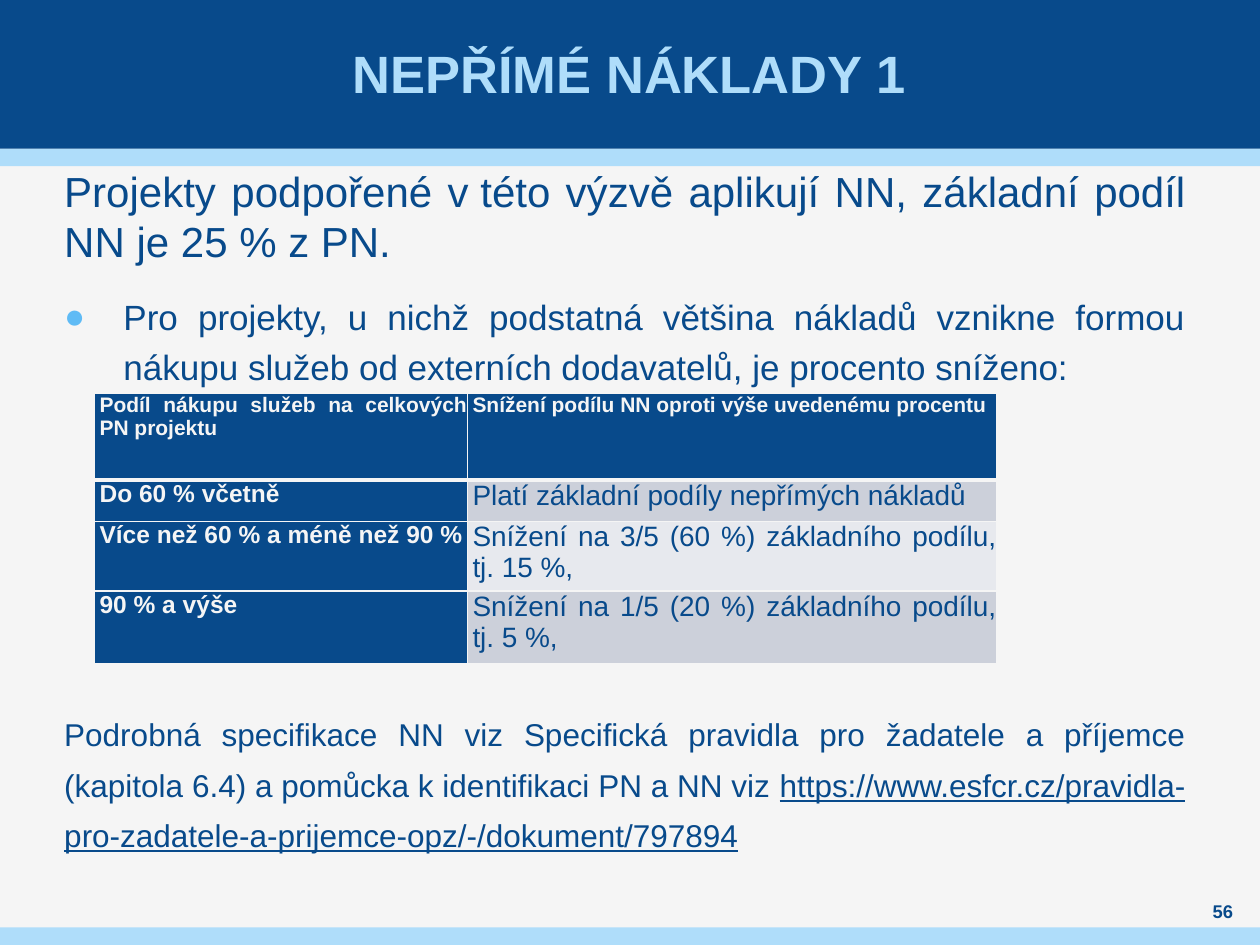
from dataclasses import dataclass

from lxml.etree import SubElement
from pptx import Presentation
from pptx.dml.color import RGBColor
from pptx.enum.shapes import MSO_SHAPE as Shape
from pptx.enum.text import MSO_ANCHOR as Anchor, MSO_AUTO_SIZE as Fit, PP_ALIGN as Align
from pptx.oxml import parse_xml
from pptx.oxml.ns import nsdecls, qn
from pptx.util import Inches, Pt

WIDTH, HEIGHT = Inches(10), Inches(7.5)


@dataclass(frozen=True)
class Theme:
    font: str = "Arial"
    navy: str = "084A8B"
    sky: str = "AFDDFA"
    dot: str = "5FBBF5"
    pale: str = "F5F5F5"
    odd: str = "CCD0DA"
    even: str = "E7E9EE"
    title: float = 30
    lead: float = 24
    item: float = 20
    note: float = 18
    head: float = 12
    label: float = 14
    cell: float = 16
    page: float = 10.5
    line: float = 28.8
    gap: float = 6


THEME = Theme()
HEADS = ("Podíl nákupu služeb na celkových PN projektu",
         "Snížení podílu NN oproti výše uvedenému procentu")
ROWS = (("Do 60 % včetně", "Platí základní podíly nepřímých nákladů "),
        ("Více než 60 % a méně než 90 %",
         "Snížení na 3/5 (60 %) základního podílu, tj. 15 %, "),
        ("90 % a výše", "Snížení na 1/5 (20 %) základního podílu, tj. 5 %, "))
LEAD = ("Projekty podpořené v\u00a0této výzvě aplikují NN, "
        "základní podíl NN je 25 % z PN. ")
ITEM = ("Pro projekty, u nichž podstatná většina nákladů vznikne formou "
        "nákupu služeb od externích dodavatelů, je procento sníženo:")
NOTE = ("Podrobná specifikace NN viz Specifická pravidla pro žadatele a příjemce "
        "(kapitola 6.4) a pomůcka k identifikaci PN a NN viz ")
LINK = "https://www.esfcr.cz/pravidla-pro-zadatele-a-prijemce-opz/-/dokument/797894"


def across(share):
    return int(WIDTH * share / 100)


def down(share):
    return int(HEIGHT * share / 100)


def area(x, y, w, h):
    """Turn percentages of the slide into left, top, width, height."""
    return across(x), down(y), across(w), down(h)


def paint(fill, color):
    fill.solid()
    fill.fore_color.rgb = RGBColor.from_string(color)


def style(para, size, color, bold=False):
    for run in para.runs:
        font = run.font
        font.name, font.size, font.bold = THEME.font, Pt(size), bold
        font.color.rgb = RGBColor.from_string(color)


def place(shape, box, side=0.0, anchor=Anchor.TOP):
    shape.left, shape.top, shape.width, shape.height = box
    frame = shape.text_frame
    frame.word_wrap, frame.auto_size = True, Fit.NONE
    frame.margin_left = frame.margin_right = Inches(side)
    frame.margin_top = frame.margin_bottom = 0
    frame.vertical_anchor = anchor
    return frame


def add_bar(slide, y, h, color):
    """Add a full-width band behind everything else."""
    bar = slide.shapes.add_shape(Shape.RECTANGLE, *area(0, y, 100, h))
    bar.shadow.inherit = False
    bar.line.fill.background()
    paint(bar.fill, color)
    tree = bar._element.getparent()
    tree.insert(2, bar._element)


def set_line(frame, text, size, color, bold=True):
    frame.text = text
    para = frame.paragraphs[0]
    para.alignment = Align.CENTER
    style(para, size, color, bold)


def set_para(para, text, size, before, dot=False):
    para.text = text
    para.alignment = Align.JUSTIFY
    para.line_spacing = Pt(THEME.line)
    para.space_before, para.space_after = Pt(before), Pt(0)
    style(para, size, THEME.navy)
    props = para._p.get_or_add_pPr()
    indent = Inches(0.47) if dot else 0
    props.set("marL", str(indent))
    props.set("indent", str(-indent))
    if dot:
        tint = SubElement(props, qn("a:buClr"))
        SubElement(tint, qn("a:srgbClr"), val=THEME.dot)
        SubElement(props, qn("a:buFont"), typeface=THEME.font)
        SubElement(props, qn("a:buChar"), char="●")
    else:
        SubElement(props, qn("a:buNone"))


def fill_body(frame):
    frame.text = ""
    lead = frame.paragraphs[0]
    set_para(lead, LEAD, THEME.lead, THEME.gap)
    lead.space_after = Pt(THEME.gap)
    set_para(frame.add_paragraph(), ITEM, THEME.item, THEME.gap, dot=True)
    # The space before the note leaves room for the table: five lines.
    room = 5 * (THEME.line + THEME.gap) + THEME.gap
    note = frame.add_paragraph()
    set_para(note, NOTE, THEME.note, room)
    note.add_run().text = LINK
    style(note, THEME.note, THEME.navy)
    note.runs[-1].font.underline = True


def edge(cell, low):
    """Draw the four cell borders; low is the weight of the bottom one."""
    props = cell._tc.get_or_add_tcPr()
    for spot, side in enumerate("LRTB"):
        wide = Pt(low if side == "B" else 1)
        props.insert(spot, parse_xml(
            f'<a:ln{side} {nsdecls("a")} w="{wide}"><a:solidFill>'
            f'<a:srgbClr val="{THEME.pale}"/></a:solidFill></a:ln{side}>'))


def set_cell(cell, text, size, color, fill, bold, low=1):
    cell.margin_left = cell.margin_right = cell.margin_top = cell.margin_bottom = 0
    cell.text = text
    para = cell.text_frame.paragraphs[0]
    para.alignment = Align.JUSTIFY
    para._p.get_or_add_pPr().set("marL", str(Inches(0.04)))
    style(para, size, color, bold)
    paint(cell.fill, fill)
    edge(cell, low)


def add_grid(slide):
    cols, rows = (29.6, 42), (9.2, 4.4, 7.33, 7.73)
    box = area(7.5, 41.6, sum(cols), sum(rows))
    grid = slide.shapes.add_table(len(rows), len(cols), *box).table
    for col, share in zip(grid.columns, cols):
        col.width = across(share)
    for row, share in zip(grid.rows, rows):
        row.height = down(share)
    for col, text in enumerate(HEADS):
        set_cell(grid.cell(0, col), text, THEME.head, THEME.pale, THEME.navy, True, 3)
    for row, (label, text) in enumerate(ROWS, 1):
        band = THEME.odd if row % 2 else THEME.even
        set_cell(grid.cell(row, 0), label, THEME.label, THEME.pale, THEME.navy, True)
        set_cell(grid.cell(row, 1), text, THEME.cell, THEME.navy, band, False)


def main():
    deck = Presentation()
    deck.slide_width, deck.slide_height = WIDTH, HEIGHT
    slide = deck.slides.add_slide(deck.slide_layouts[1])
    paint(slide.background.fill, THEME.pale)
    for y, h, color in ((98.13, 1.87, THEME.sky), (0, 15.73, THEME.navy),
                        (15.73, 1.87, THEME.sky)):
        add_bar(slide, y, h, color)
    title = place(slide.shapes.title, area(3.9, 0, 92.1, 15.33), 0.04, Anchor.MIDDLE)
    set_line(title, "NEPŘÍMÉ NÁKLADY 1", THEME.title, THEME.sky)
    fill_body(place(slide.placeholders[1], area(5.1, 17.47, 89, 80.8)))
    box = area(94.5, 95.07, 5.1, 2.67)
    page = place(slide.shapes.add_textbox(*box), box, anchor=Anchor.MIDDLE)
    set_line(page, "56", THEME.page, THEME.navy)
    add_grid(slide)
    deck.save("out.pptx")


if __name__ == "__main__":
    main()
